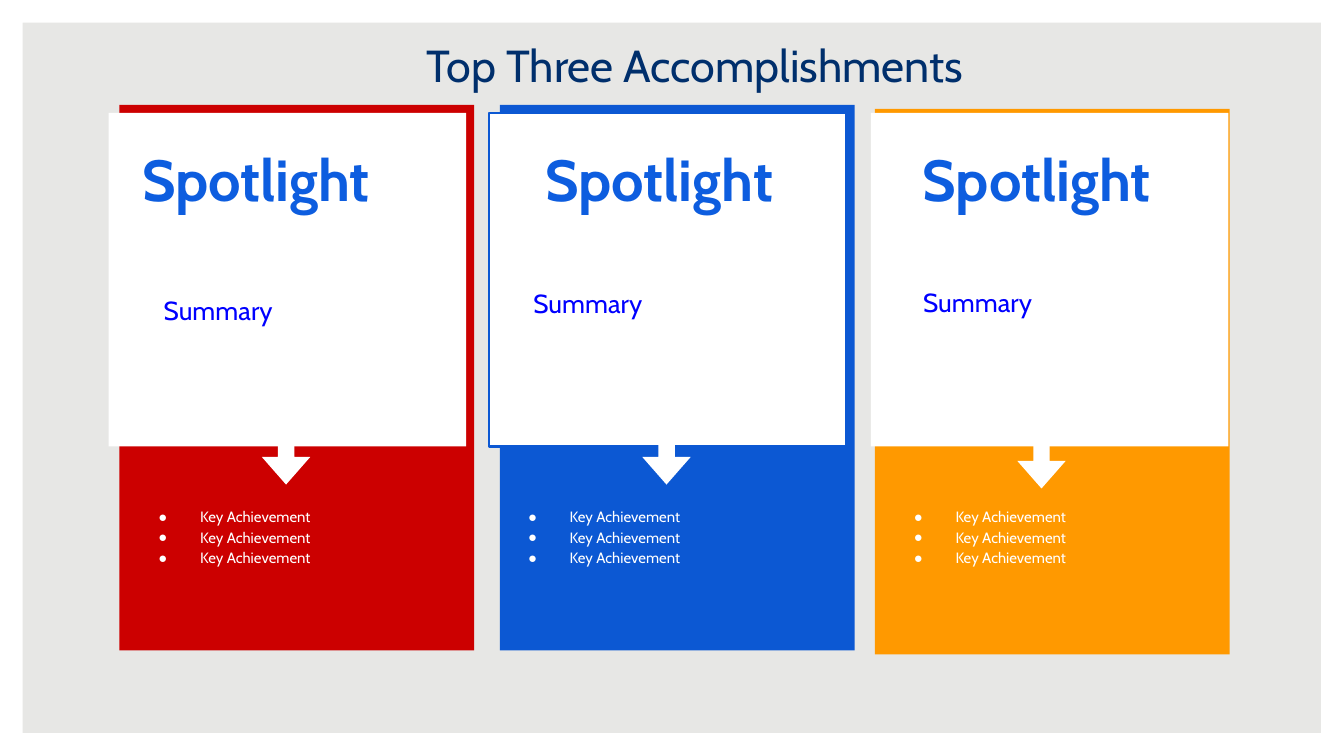
import copy
from dataclasses import dataclass

import pptx
import pptx.dml.color
import pptx.enum.shapes
import pptx.enum.text
import pptx.oxml
import pptx.oxml.ns
import pptx.util
from lxml import etree

Pt = pptx.util.Pt
Shape = pptx.enum.shapes.MSO_SHAPE
Align = pptx.enum.text.PP_ALIGN


@dataclass(frozen=True)
class Theme:
    font: str = "Cabin"
    background: str = "E7E7E5"
    white: str = "FFFFFF"
    title: str = "002F6C"
    heading: str = "0D5DDF"
    summary: str = "0000FF"
    red: str = "CC0000"
    blue: str = "0C58D3"
    orange: str = "FF9900"
    title_size: float = 24
    heading_size: float = 31
    summary_size: float = 14
    list_size: float = 8


@dataclass(frozen=True)
class Box:
    left: float
    top: float
    width: float
    height: float

    def inner(self, left, top, width, height):
        return Box(self.left + left, self.top + top, width, height)

    def lengths(self):
        return [Pt(value) for value in (self.left, self.top, self.width, self.height)]


@dataclass(frozen=True)
class Column:
    left: float
    color: str
    panel_left: float
    heading_left: float
    summary_left: float
    summary_top: float
    list_left: float = 0
    drop: float = 0
    heading: str = "Spotlight"
    heading_align: Align = Align.LEFT
    outlined: bool = False


THEME = Theme()
COLUMNS = [
    Column(64, THEME.red, -5.8, 5.1, 16.6, 94.3),
    Column(267.8, THEME.blue, -5.8, 17.3, 10.8, 90.7, list_left=-5.8, outlined=True),
    Column(468.7, THEME.orange, -2.1, 5.1, 18.7, 90, drop=2.1,
           heading="Spotlight ", heading_align=Align.CENTER),
]


def rgb(value):
    return pptx.dml.color.RGBColor.from_string(value)


def add_filled(page, kind, box, color, outline=None):
    shape = page.shapes.add_shape(kind, *box.lengths())
    shape.shadow.inherit = False
    shape.fill.solid()
    shape.fill.fore_color.rgb = rgb(color)
    if outline:
        shape.line.color.rgb = rgb(outline)
        shape.line.width = Pt(1.5)
    else:
        shape.line.fill.background()
    return shape


def write(shape, text, size, color, bold=False, align=Align.LEFT):
    frame = shape.text_frame
    frame.text = text
    frame.word_wrap = True
    frame.auto_size = pptx.enum.text.MSO_AUTO_SIZE.NONE
    frame.vertical_anchor = pptx.enum.text.MSO_ANCHOR.TOP
    frame.margin_left = frame.margin_top = Pt(7.2)
    frame.margin_right = frame.margin_bottom = Pt(7.2)
    for para in frame.paragraphs:
        para.alignment = align
        para.space_before = Pt(0)
        for span in para.runs:
            span.font.name = THEME.font
            span.font.size = Pt(size)
            span.font.bold = bold
            span.font.color.rgb = rgb(color)


def place_placeholder(page, holder, box):
    holder.left, holder.top, holder.width, holder.height = box.lengths()
    page.shapes.element.append(holder.element)


def add_bullet(para, color):
    properties = para._p.get_or_add_pPr()
    properties.set("marL", str(Pt(36)))
    properties.set("indent", str(Pt(-22.3)))
    bullet_color = etree.SubElement(properties, pptx.oxml.ns.qn("a:buClr"))
    etree.SubElement(bullet_color, pptx.oxml.ns.qn("a:srgbClr"), val=color)
    etree.SubElement(properties, pptx.oxml.ns.qn("a:buChar"), char="●")


def build_frame(page, box):
    page.background.fill.solid()
    page.background.fill.fore_color.rgb = rgb(THEME.background)
    frame = add_filled(page, Shape.FRAME, box, THEME.white)
    frame.adjustments[0] = 0.03


def build_title(page, box):
    title = page.shapes.title
    place_placeholder(page, title, box)
    write(title, "Top Three Accomplishments", THEME.title_size, THEME.title,
          align=Align.CENTER)


def build_column(page, box, column, body):
    card = box.inner(0, column.drop, box.width, box.height)
    add_filled(page, Shape.RECTANGLE, card, column.color)
    add_filled(page, Shape.RECTANGLE, box.inner(column.panel_left, 4.3, 191.5, 178.6),
               THEME.white, column.color if column.outlined else None)

    arrow = add_filled(page, Shape.RIGHT_ARROW, card.inner(75.2, 176.4, 28.1, 25.9),
                       THEME.white)
    arrow.rotation = 90
    arrow.adjustments[0] = 0.34
    arrow.adjustments[1] = 0.57

    heading = page.shapes.add_textbox(
        *box.inner(column.heading_left, 13.6, 170, 48.2).lengths())
    write(heading, column.heading, THEME.heading_size, THEME.heading, True,
          column.heading_align)
    summary = page.shapes.add_textbox(
        *box.inner(column.summary_left, column.summary_top, 150.5, 31.7).lengths())
    write(summary, "Summary", THEME.summary_size, THEME.summary)

    place_placeholder(page, body, box.inner(column.list_left, 207.3, box.width, 77.8))
    write(body, "\n".join(["Key Achievement"] * 3), THEME.list_size, THEME.white)
    for para in body.text_frame.paragraphs:
        para.line_spacing = 1.15
        add_bullet(para, THEME.white)


def main():
    deck = pptx.Presentation()
    deck.slide_width, deck.slide_height = Pt(720), Pt(405)
    comparison = deck.slide_layouts[4]
    page = deck.slides.add_slide(comparison)
    bodies = [holder for holder in page.placeholders
              if holder.placeholder_format.idx in range(1, 5)]
    spare = bodies.pop()
    page.shapes.element.remove(spare.element)

    build_frame(page, Box(0, 0, 720, 405))
    build_title(page, Box(36.7, 13, 671, 45.4))
    for column, body in zip(COLUMNS, bodies):
        build_column(page, Box(column.left, 56.2, 190.1, 292.3), column, body)
    deck.save("out.pptx")


if __name__ == "__main__":
    main()
